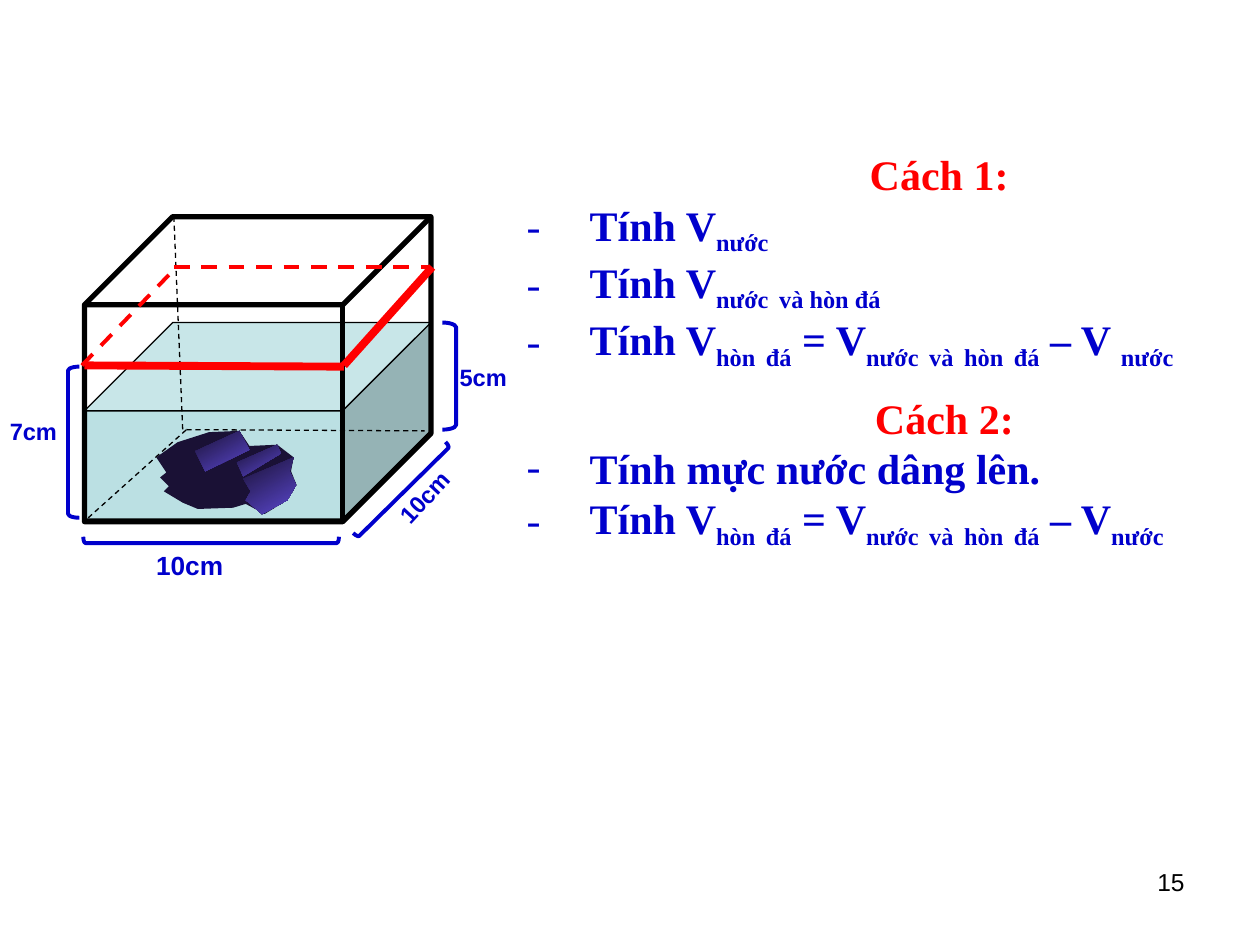
from pptx import Presentation
from pptx import util as u
from pptx.dml.color import RGBColor
from pptx.enum import dml, shapes, text
from pptx.oxml import ns
from lxml import etree

Inches, Pt = u.Inches, u.Pt
Kind = shapes.MSO_SHAPE

# Theme: colours, fonts and type sizes
theme = {
    "ink": RGBColor(0, 0, 0), "red": RGBColor(255, 0, 0),
    "blue": RGBColor(0, 0, 0xCC), "water": RGBColor(0xBB, 0xE0, 0xE3),
    "rock": RGBColor(0x1A, 0x11, 0x35), "lit": RGBColor(0x5A, 0x47, 0xCC),
    "serif": "Times New Roman", "sans": "Arial",
    "list": 24, "label": 13.5, "wide": 15, "page": 14,
}


def style(run, **vals):
    """Set font values on a run; colours are named in the theme."""
    run.font.color.rgb = theme[vals.pop("hue")]
    for key, val in vals.items():
        setattr(run.font, key, val)


def paint(shape, fill, line, width=0.75):
    """Give a shape a plain fill and line, or none."""
    shape.shadow.inherit = False
    if fill:
        shape.fill.solid()
        shape.fill.fore_color.rgb = theme[fill]
    else:
        shape.fill.background()
    if line:
        shape.line.color.rgb = theme[line]
        shape.line.width = Pt(width)
    else:
        shape.line.fill.background()


prs = Presentation()
prs.slide_width, prs.slide_height = Inches(10), Inches(7.5)
slide = prs.slides.add_slide(prs.slide_layouts[1])
title = slide.shapes.title
title._element.getparent().remove(title._element)

# Both methods; text between underscores is subscript
steps = [
    ("head", "Cách 1: "),
    ("item", "Tính V_nước_"),
    ("item", "Tính V_nước_ _và hòn đá_"),
    ("item", "Tính V_hòn_ _đá_ = V_nước_ _và_ _hòn_ _đá_ – V _nước_"),
    ("head", "Cách 2:"),
    ("item", "Tính mực nước dâng lên."),
    ("item", "Tính V_hòn_ _đá_ = V_nước_ _và_ _hòn_ _đá_ – V_nước_"),
]
body = slide.placeholders[1]
place = {"left": 4.08, "top": 1.13, "width": 6.83, "height": 3.5}
for key, val in place.items():
    setattr(body, key, Inches(val))
frame = body.text_frame
frame.word_wrap = True
frame.auto_size = text.MSO_AUTO_SIZE.NONE
for num, (role, line) in enumerate(steps):
    para = frame.paragraphs[0] if num == 0 else frame.add_paragraph()
    head = role == "head"
    para.space_before = Pt(12 if head and num else 0)
    para.alignment = text.PP_ALIGN.CENTER if head else text.PP_ALIGN.LEFT
    props = para._p.get_or_add_pPr()
    dent = 0 if head else Inches(0.5)
    props.set("marL", str(dent))
    props.set("indent", str(-dent))
    if head:
        etree.SubElement(props, ns.qn("a:buNone"))
    else:
        etree.SubElement(props, ns.qn("a:buFont")).set("typeface", theme["serif"])
        etree.SubElement(props, ns.qn("a:buChar")).set("char", "-")
    for part, words in enumerate(line.split("_")):
        if words:
            run = para.add_run()
            run.text = words
            style(run, hue="red" if head else "blue", name=theme["serif"],
                  size=Pt(theme["list"]), bold=True)
            if part % 2:
                run._r.get_or_add_rPr().set("baseline", "-25000")

# Water, hidden edges, rock, tank and water level, from back to front
parts = [
    ("cube", (0.67, 2.56, 2.75, 1.56), 0.45, "water", 0.75),
    ("edge", (1.38, 1.72, 1.45, 3.41), "ink", 0.75, True),
    ("edge", (1.48, 3.41, 3.37, 3.42), "ink", 0.75, True),
    ("edge", (0.7, 4.11, 1.48, 3.41), "ink", 0.75, True),
    ("rock", [(1.24, 3.63), (1.41, 3.51), (1.66, 3.43), (1.9, 3.42),
              (1.98, 3.54), (2.2, 3.53), (2.33, 3.63), (2.31, 3.74),
              (2.35, 3.84), (2.28, 3.97), (2.1, 4.08), (1.95, 4),
              (1.85, 4.03), (1.57, 4.04), (1.45, 3.99), (1.3, 3.9),
              (1.34, 3.86), (1.27, 3.79), (1.32, 3.75)], "rock"),
    ("rock", [(1.55, 3.58), (1.9, 3.42), (1.98, 3.57), (1.63, 3.74)], "lit"),
    ("rock", [(1.88, 3.67), (2.2, 3.53), (2.23, 3.6), (1.93, 3.78)], "lit"),
    ("rock", [(1.93, 3.8), (2.33, 3.63), (2.3, 3.74), (2.35, 3.85),
              (2.28, 3.97), (2.08, 4.08), (1.95, 3.97), (1.99, 3.9)], "lit"),
    ("cube", (0.67, 1.72, 2.75, 2.42), 0.289, None, 3),
    ("edge", (0.65, 2.9, 1.4, 2.12), "red", 2.25, True),
    ("edge", (1.38, 2.12, 3.41, 2.12), "red", 2.25, True),
    ("edge", (3.43, 2.12, 2.73, 2.9), "red", 4.5, False),
    ("edge", (2.73, 2.91, 0.67, 2.9), "red", 4.5, False),
]
for kind, spot, *vals in parts:
    if kind == "cube":
        depth, fill, width = vals
        cube = slide.shapes.add_shape(Kind.CUBE, *map(Inches, spot))
        cube.adjustments[0] = depth
        paint(cube, fill, "ink", width)
    elif kind == "edge":
        hue, width, dash = vals
        edge = slide.shapes.add_connector(
            shapes.MSO_CONNECTOR.STRAIGHT, *map(Inches, spot))
        edge.line.color.rgb = theme[hue]
        edge.line.width = Pt(width)
        if dash:
            edge.line.dash_style = dml.MSO_LINE.DASH
        etree.SubElement(edge._element.spPr, ns.qn("a:effectLst"))
    else:
        points = [(Inches(x), Inches(y)) for x, y in spot]
        pen = slide.shapes.build_freeform(*points[0])
        pen.add_line_segments(points[1:])
        rock = pen.convert_to_shape()
        paint(rock, vals[0], None)
        if vals[0] == "lit":
            rock.fill.gradient()
            rock.fill.gradient_angle = 300
            for stop, hue in zip(rock.fill.gradient_stops, ("rock", "lit")):
                stop.color.rgb = theme[hue]

# Brackets along the measured sides
braces = [
    ((0.54, 2.91, 0.09, 1.2), 0, True),
    ((3.51, 2.56, 0.11, 0.85), 180, True),
    ((1.65, 3.27, 0.05, 2.03), 90, False),
    ((3.16, 3.37, 0.05, 1.03), 225.4, True),
]
for spot, turn, flip in braces:
    brace = slide.shapes.add_shape(Kind.RIGHT_BRACKET, *map(Inches, spot))
    brace.adjustments[0] = 0.347
    brace.rotation = turn
    paint(brace, None, "blue", 2.25)
    if flip:
        brace._element.spPr.find(ns.qn("a:xfrm")).set("flipH", "1")

# Measures and page number
notes = [
    ("7cm", (-0.02, 3.26, 0.6, 0.28), 0, "label", "blue"),
    ("5cm", (3.55, 2.83, 0.69, 0.27), 0, "label", "blue"),
    ("10cm", (1.14, 4.31, 1.22, 0.35), 0, "wide", "blue"),
    ("10cm", (2.93, 3.55, 1.3, 0.33), 312.8, "label", "blue"),
    ("15", (7.17, 6.83, 2.33, 0.52), 0, "page", "ink"),
]
for words, spot, turn, size, hue in notes:
    box = slide.shapes.add_textbox(*map(Inches, spot))
    box.rotation = turn
    box.text_frame.word_wrap = True
    para = box.text_frame.paragraphs[0]
    if size == "page":
        para.alignment = text.PP_ALIGN.RIGHT
    run = para.add_run()
    run.text = words
    style(run, hue=hue, name=theme["sans"], size=Pt(theme[size]),
          bold=size != "page")

prs.save("out.pptx")
